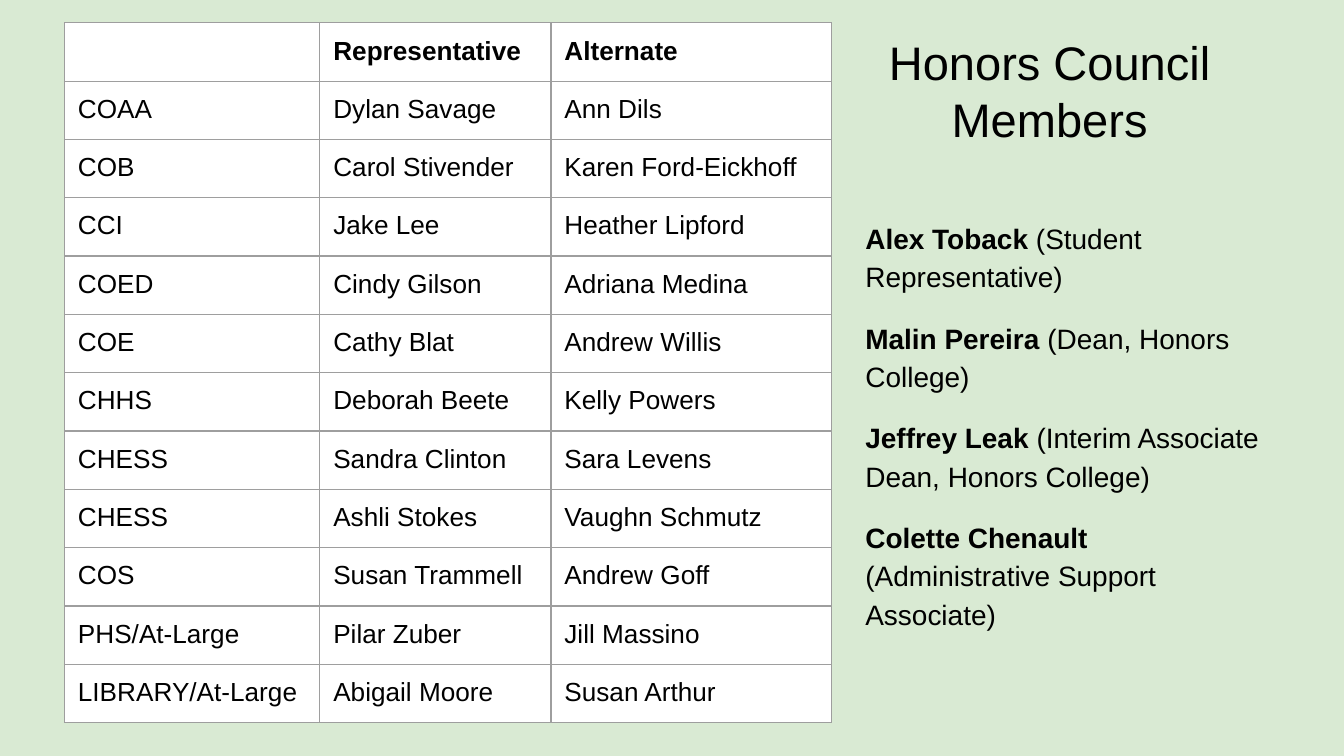
from lxml.etree import SubElement
from pptx import Presentation
from pptx.dml.color import RGBColor
from pptx.enum.text import MSO_ANCHOR, MSO_AUTO_SIZE, PP_ALIGN
from pptx.oxml.ns import qn
from pptx.util import Inches, Pt

REPRESENTATIVES = [
    ("", "Representative", "Alternate"),
    ("COAA", "Dylan Savage", "Ann Dils"),
    ("COB", "Carol Stivender", "Karen Ford-Eickhoff"),
    ("CCI", "Jake Lee", "Heather Lipford"),
    ("COED", "Cindy Gilson", "Adriana Medina"),
    ("COE", "Cathy Blat", "Andrew Willis"),
    ("CHHS", "Deborah Beete", "Kelly Powers"),
    ("CHESS", "Sandra Clinton", "Sara Levens"),
    ("CHESS", "Ashli Stokes", "Vaughn Schmutz"),
    ("COS", "Susan Trammell", "Andrew Goff"),
    ("PHS/At-Large", "Pilar Zuber", "Jill Massino"),
    ("LIBRARY/At-Large", "Abigail Moore", "Susan Arthur"),
]
COLUMN_WIDTHS = [1.9, 1.72, 2.09]
MEMBERS = [
    ("Alex Toback", "(Student Representative)"),
    ("Malin Pereira", "(Dean, Honors College)"),
    ("Jeffrey Leak", "(Interim Associate Dean, Honors College)"),
    ("Colette Chenault", "(Administrative Support Associate)"),
]


def paint(fill, color):
    fill.solid()
    fill.fore_color.rgb = RGBColor.from_string(color)


def style(font, size, bold=False):
    font.name = "Arial"
    font.size = Pt(size)
    font.bold = bold
    paint(font.fill, "000000")


def set_margins(holder, size=0.1):
    holder.margin_left = holder.margin_right = Inches(size)
    holder.margin_top = holder.margin_bottom = Inches(size)


def add_borders(cell, color, width):
    properties = cell._tc.get_or_add_tcPr()
    for index, side in enumerate(("a:lnL", "a:lnR", "a:lnT", "a:lnB")):
        line = properties.makeelement(qn(side), {"w": str(Pt(width))})
        fill = SubElement(line, qn("a:solidFill"))
        SubElement(fill, qn("a:srgbClr"), val=color)
        properties.insert(index, line)  # borders precede the cell fill


def add_title(slide, left, top, width, height):
    title = slide.shapes.title
    title.left, title.top = Inches(left), Inches(top)
    title.width, title.height = Inches(width), Inches(height)
    frame = title.text_frame
    frame.text = "Honors Council Members"
    frame.word_wrap = True
    frame.auto_size = MSO_AUTO_SIZE.NONE
    frame.vertical_anchor = MSO_ANCHOR.TOP
    set_margins(frame)
    heading = frame.paragraphs[0]
    heading.alignment = PP_ALIGN.CENTER
    style(heading.font, 25.2)


def add_representatives(slide, left, top, row_height):
    rows = len(REPRESENTATIVES)
    table = slide.shapes.add_table(
        rows, len(COLUMN_WIDTHS), Inches(left), Inches(top),
        Inches(sum(COLUMN_WIDTHS)), Inches(row_height * rows)).table
    for column, width in zip(table.columns, COLUMN_WIDTHS):
        column.width = Inches(width)
    for row_index, entries in enumerate(REPRESENTATIVES):
        table.rows[row_index].height = Inches(row_height)
        for column_index, entry in enumerate(entries):
            cell = table.cell(row_index, column_index)
            paint(cell.fill, "FFFFFF")
            add_borders(cell, "9E9E9E", 0.75)
            set_margins(cell, 0.1 if entry else 0.05)
            if entry:
                cell.text = entry
            style(cell.text_frame.paragraphs[0].font, 14, bold=row_index == 0)


def add_members(slide, left, top, width, height):
    box = slide.shapes.add_textbox(
        Inches(left), Inches(top), Inches(width), Inches(height))
    frame = box.text_frame
    frame.word_wrap = True
    set_margins(frame)
    frame.margin_top = Inches(0.46)  # starts the list below the title
    for index, (name, role) in enumerate(MEMBERS):
        member = frame.paragraphs[0] if index == 0 else frame.add_paragraph()
        member.line_spacing = 1.15
        member.space_before = Pt(12 if index else 0)
        for text, bold in ((name, True), (f" {role}", False)):
            run = member.add_run()
            run.text = text
            style(run.font, 15, bold)


def main():
    presentation = Presentation()
    # Widescreen, 16 to 9
    presentation.slide_width = Inches(10)
    presentation.slide_height = Inches(10) * 9 // 16
    slide = presentation.slides.add_slide(presentation.slide_layouts[5])
    paint(slide.background.fill, "D9EAD3")
    add_title(slide, 5.96, 0.15, 3.7, 0.63)
    add_members(slide, 6.34, 1.15, 3.28, 4.09)
    add_representatives(slide, 0.48, 0.17, 0.42)
    presentation.save("out.pptx")


if __name__ == "__main__":
    main()
